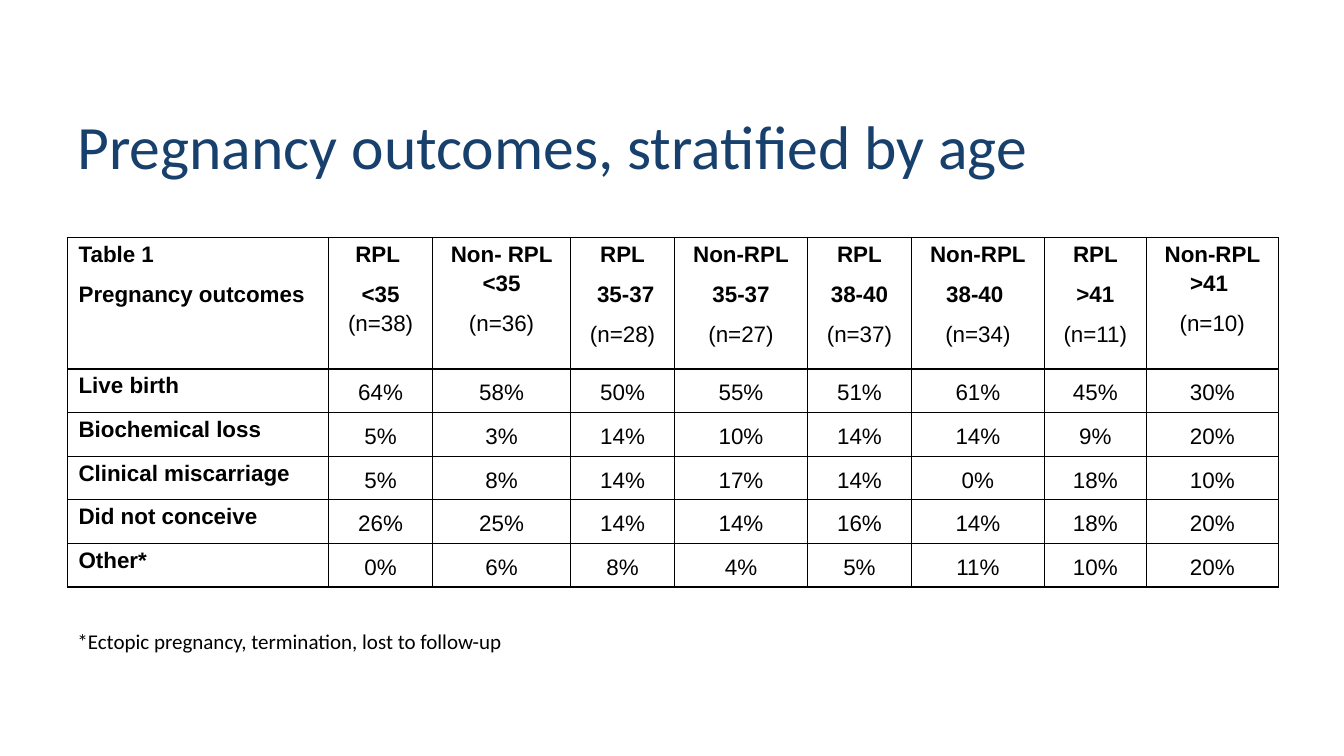
import lxml.etree
import pptx
import pptx.dml.color
import pptx.enum.text
import pptx.oxml.ns
import pptx.util

Inches = pptx.util.Inches
Pt = pptx.util.Pt
ALIGN = pptx.enum.text.PP_ALIGN
ANCHOR = pptx.enum.text.MSO_ANCHOR

TITLE = "Pregnancy outcomes, stratified by age"
NOTE = "*Ectopic pregnancy, termination, lost to follow-up"
HEADS = [
    ["Table 1", "Pregnancy outcomes"],
    ["RPL ", "<35 (n=38)"],
    ["Non- RPL <35", "(n=36)"],
    ["RPL", " 35-37", "(n=28)"],
    ["Non-RPL", "35-37", "(n=27)"],
    ["RPL", "38-40", "(n=37)"],
    ["Non-RPL", "38-40 ", "(n=34)"],
    ["RPL", ">41", "(n=11)"],
    ["Non-RPL >41 ", "(n=10)"],
]
RATES = {
    "Live birth": [64, 58, 50, 55, 51, 61, 45, 30],
    "Biochemical loss": [5, 3, 14, 10, 14, 14, 9, 20],
    "Clinical miscarriage": [5, 8, 14, 17, 14, 0, 18, 10],
    "Did not conceive": [26, 25, 14, 14, 16, 14, 18, 20],
    "Other*": [0, 6, 8, 4, 5, 11, 10, 20],
}
COLORS = {"title": "17406D", "text": "000000", "line": "000000"}
WIDTHS = [2.59, 1.03, 1.37, 1.03, 1.32, 1.03, 1.32, 1.01, 1.31]
HEAD_H, ROW_H = 1.3, 0.433
LEFT, TOP = 0.67, 2.36


def write(frame, lines, size, font="Calibri", color="text", bold=False,
          align=ALIGN.LEFT, space=None, after=0):
    """Fill a text frame, one paragraph a line; a count in brackets is never bold."""
    frame.word_wrap = True
    for i, line in enumerate(lines):
        para = frame.paragraphs[0] if i == 0 else frame.add_paragraph()
        para.alignment = align
        para.line_spacing = space
        para.space_after = Pt(after)
        label, mark, count = line.partition("(")
        for text, heavy in ((label, bold), (mark + count, False)):
            if text:
                run = para.add_run()
                run.text = text
                run.font.name = font
                run.font.size = Pt(size)
                run.font.bold = heavy
                run.font.color.rgb = pptx.dml.color.RGBColor.from_string(COLORS[color])


def border(cell):
    props = cell._tc.get_or_add_tcPr()
    for side in ("lnL", "lnR", "lnT", "lnB"):
        line = lxml.etree.SubElement(props, pptx.oxml.ns.qn("a:" + side), w=str(Pt(1)))
        fill = lxml.etree.SubElement(line, pptx.oxml.ns.qn("a:solidFill"))
        lxml.etree.SubElement(fill, pptx.oxml.ns.qn("a:srgbClr"), val=COLORS["line"])


def add_grid(slide):
    rows = [HEADS] + [[[name]] + [[f"{rate}%"] for rate in rates]
                      for name, rates in RATES.items()]
    height = HEAD_H + ROW_H * len(RATES)
    table = slide.shapes.add_table(len(rows), len(WIDTHS), Inches(LEFT), Inches(TOP),
                                   Inches(sum(WIDTHS)), Inches(height)).table
    table.first_row = table.horz_banding = False
    for col, width in zip(table.columns, WIDTHS):
        col.width = Inches(width)
    for r, row in enumerate(rows):
        table.rows[r].height = Inches(ROW_H if r else HEAD_H)
        for c, lines in enumerate(row):
            cell = table.cell(r, c)
            border(cell)
            cell.fill.background()
            cell.margin_left = cell.margin_right = Inches(0.11)
            cell.margin_top, cell.margin_bottom = Inches(0.01), 0
            cell.vertical_anchor = ANCHOR.MIDDLE if r and c else ANCHOR.TOP
            write(cell.text_frame, lines, 16, font="Arial", bold=not (r and c),
                  align=ALIGN.CENTER if c else ALIGN.LEFT, space=1.15, after=8)


def main():
    deck = pptx.Presentation()
    deck.slide_width, deck.slide_height = Inches(13.33), Inches(7.5)
    slide = deck.slides.add_slide(deck.slide_layouts[6])
    title = slide.shapes.add_textbox(Inches(LEFT), Inches(0.88), Inches(12), Inches(1.2))
    title.text_frame.vertical_anchor = ANCHOR.MIDDLE
    write(title.text_frame, [TITLE], 44, color="title", space=0.9)
    add_grid(slide)
    note = slide.shapes.add_textbox(Inches(LEFT), Inches(6.19), Inches(11.49), Inches(0.85))
    write(note.text_frame, [NOTE], 15)
    deck.save("out.pptx")


if __name__ == "__main__":
    main()
